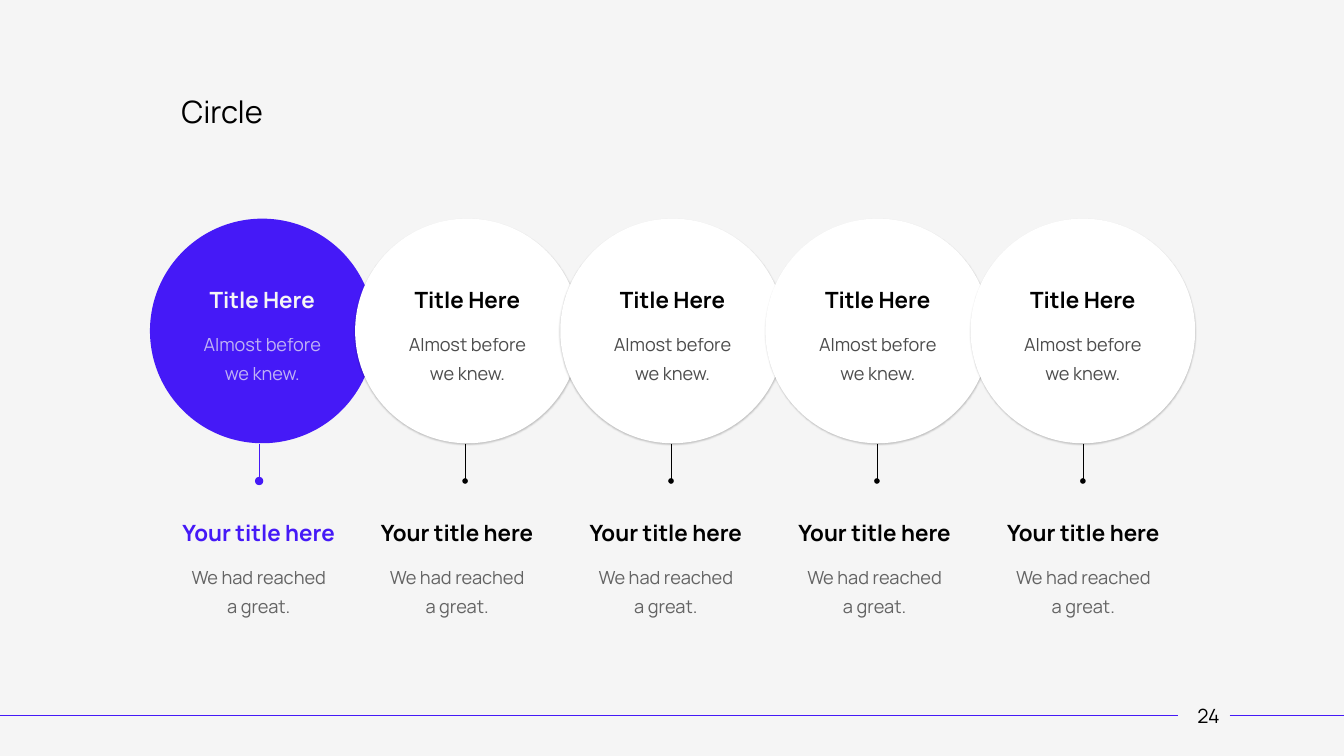
from lxml import etree
from pptx import Presentation
from pptx.dml.color import RGBColor
from pptx.enum import shapes, text
from pptx.oxml import ns
from pptx.util import Cm, Pt

FONT = "Manrope"
BLUE = RGBColor(0x45, 0x19, 0xF7)
PALE = RGBColor(0xF5, 0xF5, 0xF5)
WHITE = RGBColor(0xFF, 0xFF, 0xFF)
BLACK = RGBColor(0, 0, 0)
GREY = RGBColor(0x26, 0x26, 0x26)
COUNT = 5


def child(node, tag, **attrs):
    return etree.SubElement(node, ns.qn(tag), attrs)


def add_run(para, words, size, color, bold=False, alpha=None):
    run = para.add_run()
    run.text = words
    font = run.font
    font.name, font.size, font.bold = FONT, Pt(size), bold
    font.color.rgb = color
    if alpha:
        tint = run._r.find(".//" + ns.qn("a:srgbClr"))
        child(tint, "a:alpha", val=str(alpha * 1000))


def add_pair(frame, head, tone, lines, shade):
    """Bold heading with a paler paragraph under it."""
    first, body = frame.paragraphs[0], frame.add_paragraph()
    for para in (first, body):
        para.alignment = text.PP_ALIGN.CENTER
        para.line_spacing = 1.3
    body.space_before = Pt(10)
    add_run(first, head, 16, tone, bold=True)
    for i, line in enumerate(lines):
        if i:
            body.add_line_break()
        add_run(body, line, 13, shade, alpha=70)


def add_box(slide, left, top, width, height, pad=True):
    frame = slide.shapes.add_textbox(
        Cm(left), Cm(top), Cm(width), Cm(height)).text_frame
    frame.word_wrap = True
    if not pad:
        frame.margin_left = frame.margin_right = 0
        frame.margin_top = frame.margin_bottom = 0
    return frame


def add_line(slide, x1, y1, x2, y2, color, dot=None):
    line = slide.shapes.add_connector(
        shapes.MSO_CONNECTOR.STRAIGHT, Cm(x1), Cm(y1), Cm(x2), Cm(y2))
    line.line.color.rgb = color
    line.line.width = Pt(0.5)
    if dot:
        child(line.line._get_or_add_ln(), "a:tailEnd", type="oval", w=dot, len=dot)
    child(line._element.spPr, "a:effectLst")


def add_title(slide, left, top, width, height):
    frame = add_box(slide, left, top, width, height)
    frame.word_wrap = False
    frame.auto_size = text.MSO_AUTO_SIZE.SHAPE_TO_FIT_TEXT
    add_run(frame.paragraphs[0], "Circle", 22, BLACK)


def add_foot(slide, width, mid):
    add_line(slide, 0, mid, 29.69, mid, BLUE)
    add_line(slide, 30.99, mid, width, mid, BLUE)
    frame = add_box(slide, 29.62, mid - 0.51, 1.12, 1.02, pad=False)
    frame.vertical_anchor = text.MSO_ANCHOR.MIDDLE
    frame.paragraphs[0].alignment = text.PP_ALIGN.RIGHT
    add_run(frame.paragraphs[0], "24", 14, BLACK)


def add_disc(slide, left, top, size, main):
    disc = slide.shapes.add_shape(
        shapes.MSO_SHAPE.OVAL, Cm(left), Cm(top), Cm(size), Cm(size))
    disc.shadow.inherit = False
    disc.fill.solid()
    disc.fill.fore_color.rgb = BLUE if main else WHITE
    disc.line.fill.background()
    # Soft shadow under the white discs
    if not main:
        effects = disc._element.spPr.find(ns.qn("a:effectLst"))
        shadow = child(effects, "a:outerShdw", blurRad=str(Pt(1)), dist=str(Pt(1)),
                       dir="5400000", algn="t", rotWithShape="0")
        child(child(shadow, "a:srgbClr", val="000000"), "a:alpha", val="20000")
    disc.text_frame.word_wrap = True
    disc.text_frame.vertical_anchor = text.MSO_ANCHOR.MIDDLE
    ink = PALE if main else BLACK
    add_pair(disc.text_frame, "Title Here", ink, ["Almost before we knew."], ink)


def add_chain(slide, left, top, size, pitch):
    for i in range(COUNT):
        add_disc(slide, left + i * pitch, top, size, i == 0)


def add_stems(slide, left, top, height, pitch):
    for i in range(COUNT):
        x = left + i * pitch
        color, dot = (BLACK, "sm") if i else (BLUE, "med")
        add_line(slide, x, top, x, top + height, color, dot)


def add_notes(slide, left, top, width, height, pitch):
    # The first caption stands under its own stem, the rest are evenly spaced
    starts = [left] + [left + 5 + i * pitch for i in range(COUNT - 1)]
    for i, x in enumerate(starts):
        frame = add_box(slide, x, top, width, height, pad=False)
        add_pair(frame, "Your title here", BLACK if i else BLUE,
                 ["We had reached", "a great."], GREY)


def main():
    deck = Presentation()
    deck.slide_width, deck.slide_height = Cm(33.87), Cm(19.05)
    slide = deck.slides.add_slide(deck.slide_layouts[6])
    slide.background.fill.solid()
    slide.background.fill.fore_color.rgb = PALE

    add_title(slide, 4.32, 2.21, 2.87, 1.19)
    add_foot(slide, 33.87, 18.03)
    add_chain(slide, 3.78, 5.51, 5.66, 5.17)
    add_stems(slide, 6.53, 11.18, 0.94, 5.19)
    add_notes(slide, 4.07, 12.88, 4.9, 2.64, 5.26)
    deck.save("out.pptx")


if __name__ == "__main__":
    main()
